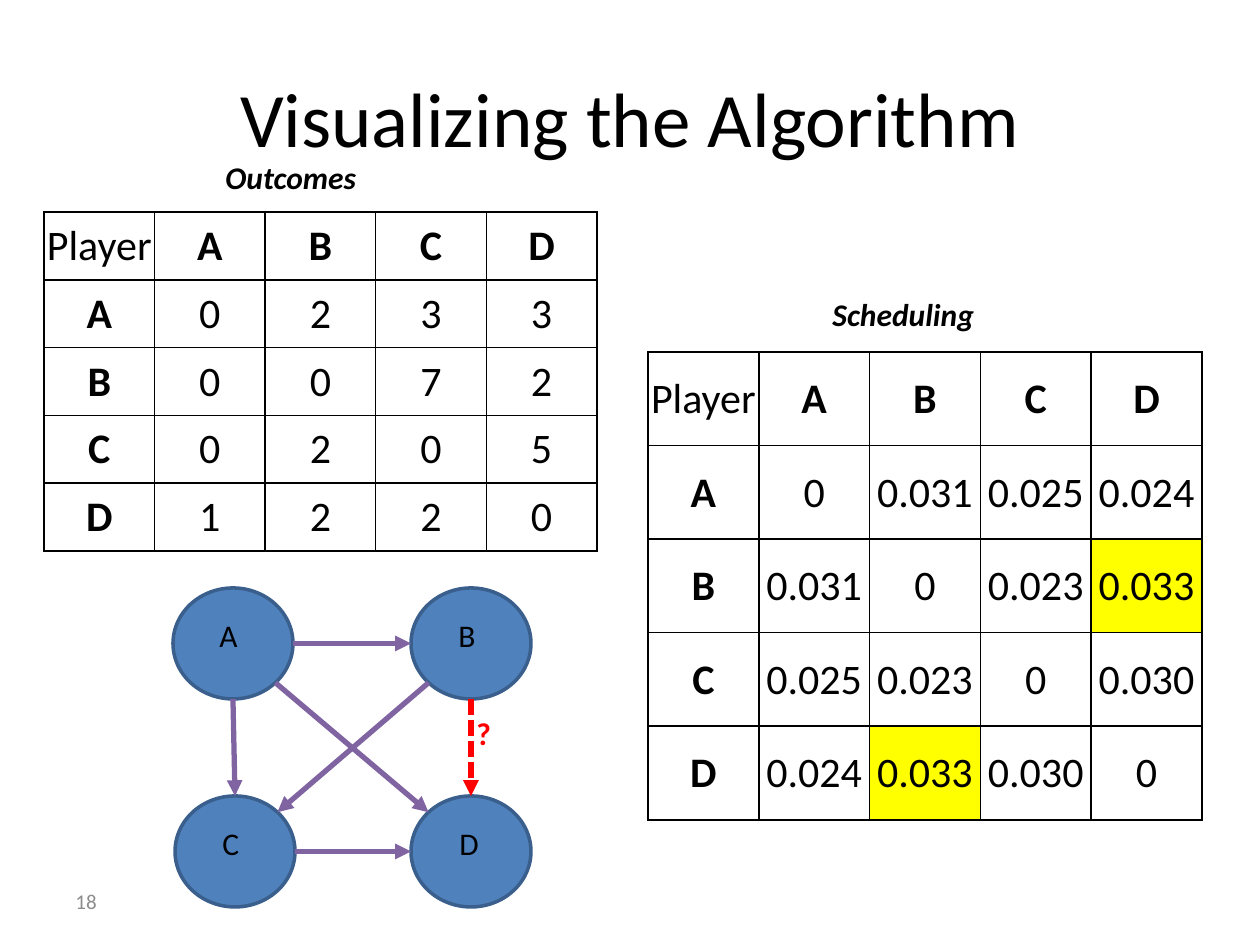
from dataclasses import dataclass
from math import sqrt

from lxml.etree import SubElement
from pptx import Presentation
from pptx.dml.color import RGBColor
from pptx.enum.dml import MSO_LINE
from pptx.enum.shapes import MSO_CONNECTOR, MSO_SHAPE
from pptx.enum.text import MSO_ANCHOR, PP_ALIGN
from pptx.oxml import parse_xml
from pptx.oxml.ns import nsdecls, qn
from pptx.util import Emu, Pt


@dataclass(frozen=True)
class Theme:
    font: str = "Calibri"
    ink: str = "000000"
    muted: str = "8C8C8C"
    node: str = "4F81BD"
    node_line: str = "3A5F8C"
    edge: str = "8064A2"
    alert: str = "FF0000"
    highlight: str = "FFFF00"
    title_size: int = 44
    table_size: int = 24
    label_size: int = 18
    number_size: int = 12


THEME = Theme()

# Content: lengths in px, boxes as left, top, width, height
TITLE = ("Visualizing the Algorithm", (63, 38, 1134, 157))
PLAYERS = ["A", "B", "C", "D"]
TABLES = [
    {"box": (44, 212, 553, 339), "highlights": set(),
     "rows": [["0", "2", "3", "3"],
              ["0", "0", "7", "2"],
              ["0", "2", "0", "5"],
              ["1", "2", "2", "0"]]},
    {"box": (648, 352, 554, 468), "highlights": {("B", "D"), ("D", "B")},
     "rows": [["0", "0.031", "0.025", "0.024"],
              ["0.031", "0", "0.023", "0.033"],
              ["0.025", "0.023", "0", "0.030"],
              ["0.024", "0.033", "0.030", "0"]]},
]
CAPTIONS = [("Outcomes", (213, 152, 233, 64)), ("Scheduling", (820, 289, 233, 64))]
QUESTION = ("?", (464, 708, 48, 64))
SLIDE_NUMBER = ("18", (63, 876, 294, 50))

# Graph: left and top of each node, then the left of its label
NODES = {"A": (173, 588, 207), "B": (411, 588, 446),
         "C": (175, 796, 210), "D": (411, 796, 447)}
NODE_WIDTH, NODE_HEIGHT = 120, 111
LABEL_DROP, LABEL_WIDTH, LABEL_HEIGHT = 22, 40, 63
EDGES = [("A", "B"), ("C", "D"), ("B", "C"), ("A", "C"), ("A", "D")]
OPEN_EDGE = ("B", "D")

PX = 914400 / 126


def px(*lengths):
    return [Emu(round(length * PX)) for length in lengths]


def color(value):
    return RGBColor.from_string(value)


def write(text_frame, text, size, ink=THEME.ink, bold=False, italic=False, align=None):
    text_frame.text = text
    paragraph = text_frame.paragraphs[0]
    paragraph.alignment = align
    font = paragraph.runs[0].font
    font.name, font.size = THEME.font, Pt(size)
    font.bold, font.italic = bold, italic
    font.color.rgb = color(ink)


def add_text(slide, text, box, size, **style):
    text_frame = slide.shapes.add_textbox(*px(*box)).text_frame
    text_frame.word_wrap = True
    write(text_frame, text, size, **style)
    return text_frame


def add_borders(cell):
    properties = cell._tc.get_or_add_tcPr()
    for index, side in enumerate(["lnL", "lnR", "lnT", "lnB"]):
        properties.insert(index, parse_xml(
            f'<a:{side} {nsdecls("a")} w="12700"><a:solidFill>'
            f'<a:srgbClr val="{THEME.ink}"/></a:solidFill></a:{side}>'))


def add_matrix(slide, box, rows, highlights):
    grid = [["Player", *PLAYERS]] + [[name, *row] for name, row in zip(PLAYERS, rows)]
    count = len(grid)
    left, top, width, height = px(*box)
    table = slide.shapes.add_table(count, count, left, top, width, height).table
    for row in table.rows:
        row.height = Emu(height // count)
    for column in table.columns:
        column.width = Emu(width // count)
    for i, values in enumerate(grid):
        for j, value in enumerate(values):
            cell = table.cell(i, j)
            cell.margin_left = cell.margin_right = cell.margin_top = px(1)[0]
            cell.margin_bottom = 0
            cell.vertical_anchor = MSO_ANCHOR.MIDDLE
            write(cell.text_frame, value, THEME.table_size,
                  bold=(i == 0) != (j == 0), align=PP_ALIGN.CENTER)
            if (grid[i][0], grid[0][j]) in highlights:
                cell.fill.solid()
                cell.fill.fore_color.rgb = color(THEME.highlight)
            else:
                cell.fill.background()
            add_borders(cell)


def add_node(slide, left, top):
    shape = slide.shapes.add_shape(
        MSO_SHAPE.OVAL, *px(left, top, NODE_WIDTH, NODE_HEIGHT))
    shape.shadow.inherit = False
    shape.fill.solid()
    shape.fill.fore_color.rgb = color(THEME.node)
    shape.line.color.rgb = color(THEME.node_line)
    shape.line.width = Pt(2)


def rim_point(name, toward):
    """Point on a node's rim in one of the eight compass directions."""
    (left, top, _), (other_left, other_top, _) = NODES[name], NODES[toward]
    across, down = other_left - left, other_top - top
    # Nodes of one column may differ by a few px
    step_x = 0 if abs(across) < NODE_WIDTH else across / abs(across)
    step_y = 0 if down == 0 else down / abs(down)
    length = sqrt(step_x ** 2 + step_y ** 2)
    return (left + NODE_WIDTH / 2 * (1 + step_x / length),
            top + NODE_HEIGHT / 2 * (1 + step_y / length))


def add_edge(slide, start, end, ink=THEME.edge, dash=None):
    connector = slide.shapes.add_connector(
        MSO_CONNECTOR.STRAIGHT, *px(*rim_point(start, end), *rim_point(end, start)))
    line = connector.line
    line.color.rgb = color(ink)
    line.width = Pt(3)
    if dash:
        line.dash_style = dash
    SubElement(line._get_or_add_ln(), qn("a:tailEnd"), type="triangle")
    SubElement(connector._element.spPr, qn("a:effectLst"))


def main():
    presentation = Presentation()
    presentation.slide_width, presentation.slide_height = px(1260, 945)
    slide = presentation.slides.add_slide(presentation.slide_layouts[5])

    # Title
    text, box = TITLE
    title = slide.shapes.title
    title.left, title.top, title.width, title.height = px(*box)
    title.text_frame.vertical_anchor = MSO_ANCHOR.MIDDLE
    write(title.text_frame, text, THEME.title_size, align=PP_ALIGN.CENTER)

    # Tables
    for table in TABLES:
        add_matrix(slide, **table)

    # Slide number
    number = add_text(slide, *SLIDE_NUMBER, THEME.number_size, ink=THEME.muted)
    number.vertical_anchor = MSO_ANCHOR.MIDDLE

    # Graph
    for left, top, _ in NODES.values():
        add_node(slide, left, top)
    for start, end in EDGES:
        add_edge(slide, start, end)
    add_edge(slide, *OPEN_EDGE, ink=THEME.alert, dash=MSO_LINE.SQUARE_DOT)
    for name, (_, top, label_left) in NODES.items():
        add_text(slide, name, (label_left, top + LABEL_DROP, LABEL_WIDTH, LABEL_HEIGHT),
                 THEME.label_size)
    add_text(slide, *QUESTION, THEME.label_size, ink=THEME.alert, bold=True)

    # Table captions
    for text, box in CAPTIONS:
        add_text(slide, text, box, THEME.label_size, bold=True, italic=True)

    presentation.save("out.pptx")


if __name__ == "__main__":
    main()
